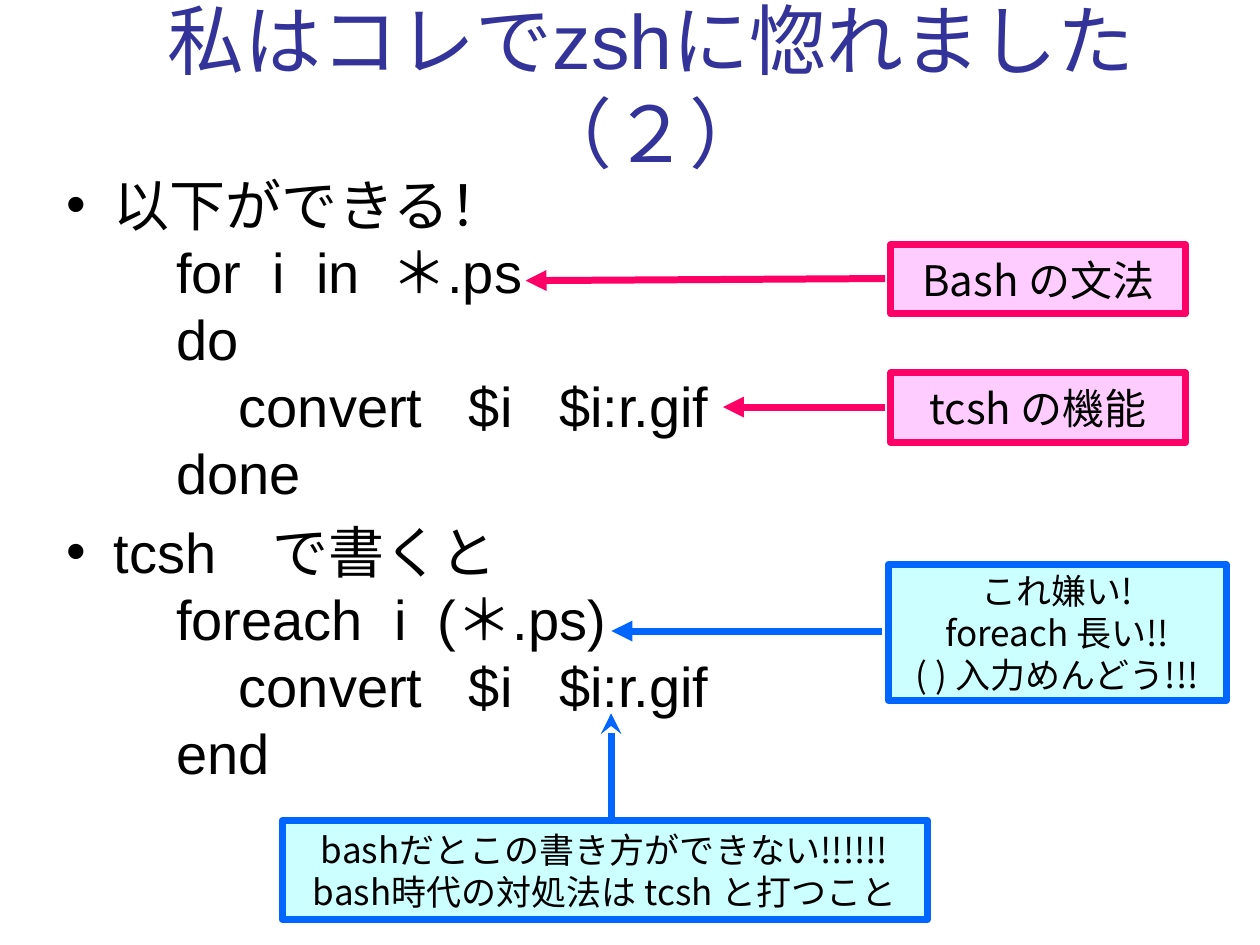
from lxml.etree import SubElement
from pptx import Presentation
from pptx.dml.color import RGBColor
from pptx.enum.shapes import MSO_SHAPE as Preset
from pptx.enum.text import MSO_ANCHOR as Anchor, MSO_AUTO_SIZE as AutoSize, PP_ALIGN as Align
from pptx.oxml.ns import qn
from pptx.util import Cm, Pt

INDIGO = RGBColor(0x33, 0x33, 0x99)
BLACK = RGBColor(0, 0, 0)
BLUE = RGBColor(0x00, 0x66, 0xFF)
PALE_CYAN = RGBColor(0xCC, 0xFF, 0xFF)
RED = RGBColor(0xFF, 0x00, 0x66)
PALE_PINK = RGBColor(0xFF, 0xCC, 0xFF)
LATIN_FONT, CALLOUT_FONT = "Arial", "Noto Sans CJK JP"

# Content
TITLE = "私はコレでzshに惚れました（２）"
# (code level, line); level 0 is a bulleted heading
LINES = [
    (0, "以下ができる！"),
    (1, "for  i  in  ＊.ps"),
    (1, "do"),
    (2, "convert   $i   $i:r.gif"),
    (1, "done"),
    (0, "tcsh\u3000で書くと".replace("\u3000", "　")),
    (1, "foreach  i  (＊.ps)"),
    (2, "convert   $i   $i:r.gif"),
    (1, "end"),
]
DISLIKE = {"fill": PALE_CYAN, "line": BLUE, "size": 20}
PRAISE = {"fill": PALE_PINK, "line": RED, "size": 24}
# (lines, box in cm, pointer start y/x and end y/x as shares of the box, arrowhead, style)
CALLOUTS = [
    (["これ嫌い!", "foreach 長い!!", "( ) 入力めんどう!!!"],
     (17.91, 11.38, 6.81, 2.74), (0.49, -0.02, 0.49, -0.82), "triangle", DISLIKE),
    (["bashだとこの書き方ができない!!!!!!", "bash時代の対処法は tcsh と打つこと"],
     (5.69, 16.54, 13, 2), (-0.01, 0.51, -1.08, 0.51), "stealth", DISLIKE),
    (["Bash の文法"],
     (17.96, 4.93, 5.94, 1.4), (0.49, -0.02, 0.52, -1.24), "triangle", PRAISE),
    (["tcsh の機能"],
     (17.96, 7.52, 5.94, 1.4), (0.49, -0.02, 0.49, -0.57), "triangle", PRAISE),
]
CODE_LEFT, CODE_STEP = 0.95, 1.26  # cm


def write(paragraph, text, *, size, font=LATIN_FONT, color=BLACK, align=None):
    run = paragraph.add_run()
    run.text = text
    run.font.size, run.font.name = Pt(size), font
    run.font.color.rgb = color
    SubElement(run.font._element, qn("a:ea")).set("typeface", font)
    if align is not None:
        paragraph.alignment = align


def paragraphs(frame, count):
    return [frame.paragraphs[0]] + [frame.add_paragraph() for _ in range(count - 1)]


def place(placeholder, left, top, width, height):
    placeholder.left, placeholder.top = Cm(left), Cm(top)
    placeholder.width, placeholder.height = Cm(width), Cm(height)
    placeholder.text_frame.auto_size = AutoSize.NONE
    return placeholder.text_frame


def add_callout(slide, lines, box, pointer, head, style):
    callout = slide.shapes.add_shape(Preset.LINE_CALLOUT_1, *map(Cm, box))
    for index, share in enumerate(pointer):
        callout.adjustments[index] = share
    callout.shadow.inherit = False
    callout.fill.solid()
    callout.fill.fore_color.rgb = style["fill"]
    callout.line.color.rgb = style["line"]
    callout.line.width = Pt(4)
    outline = callout.line._get_or_add_ln()
    SubElement(outline, qn("a:tailEnd")).set("type", head)

    frame = callout.text_frame
    frame.word_wrap = False
    frame.vertical_anchor = Anchor.MIDDLE
    for paragraph, line in zip(paragraphs(frame, len(lines)), lines):
        write(paragraph, line, size=style["size"], font=CALLOUT_FONT, align=Align.CENTER)


def main():
    deck = Presentation()
    deck.slide_width, deck.slide_height = Cm(25.4), Cm(19.05)
    slide = deck.slides.add_slide(deck.slide_layouts[1])

    # Title
    heading = place(slide.shapes.title, 1.7, 0.13, 22.86, 3.18)
    heading.vertical_anchor = Anchor.MIDDLE
    write(heading.paragraphs[0], TITLE, size=44, color=INDIGO, align=Align.CENTER)

    # Bulleted headings with indented code
    body = place(slide.placeholders[1], 1.09, 3.3, 22.86, 12.57)
    for paragraph, (level, line) in zip(paragraphs(body, len(LINES)), LINES):
        write(paragraph, line, size=32)
        if level:
            paragraph.space_before = Pt(0)
            properties = paragraph._p.get_or_add_pPr()
            properties.set("marL", str(Cm(CODE_LEFT + level * CODE_STEP)))
            properties.set("indent", "0")
            SubElement(properties, qn("a:buNone"))

    # Remarks pointing at the code
    for callout in CALLOUTS:
        add_callout(slide, *callout)

    deck.save("out.pptx")


if __name__ == "__main__":
    main()
